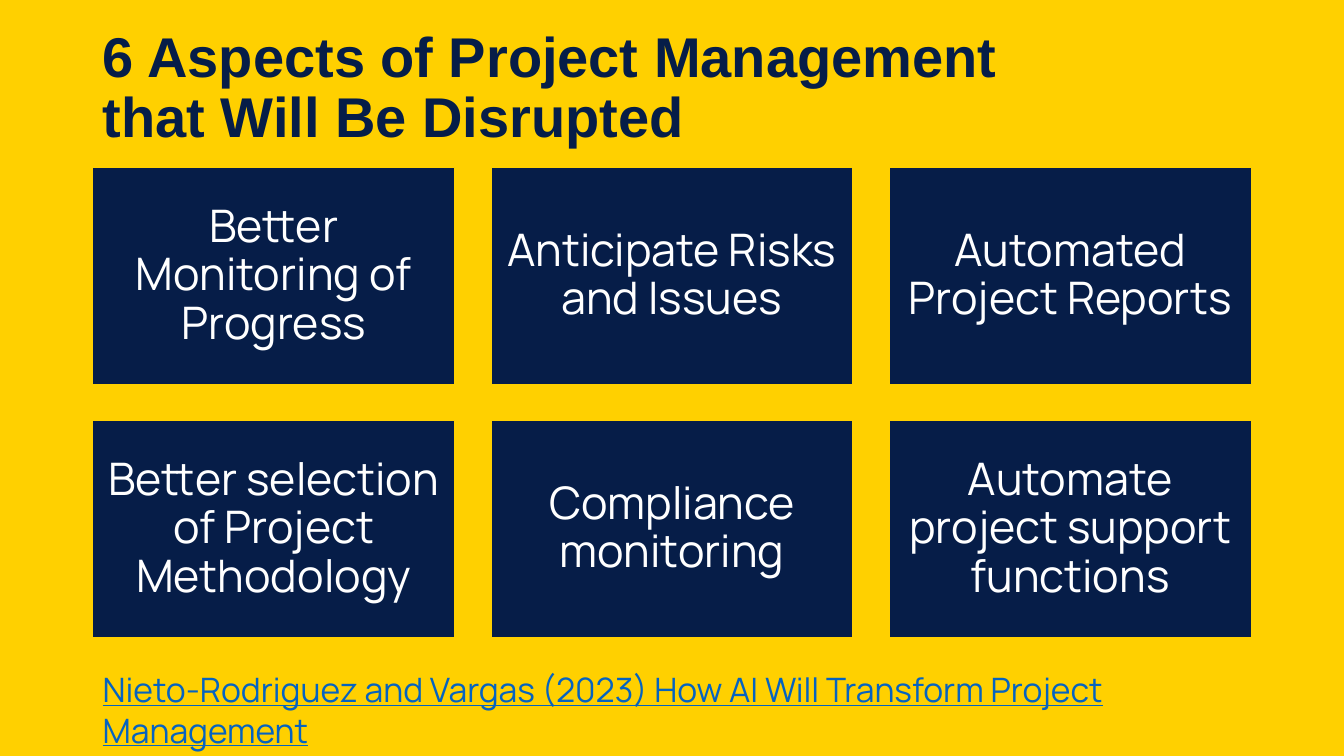
from pptx import Presentation
from pptx.dml.color import RGBColor
from pptx.enum.shapes import MSO_SHAPE
from pptx.enum.text import MSO_ANCHOR, MSO_AUTO_SIZE, PP_ALIGN
from pptx.util import Inches, Pt

COLORS = {"yellow": "FFD000", "navy": "061D48", "white": "FFFFFF", "citation": "0563C1"}
ASPECTS = [
    "Better Monitoring of Progress",
    "Anticipate Risks and Issues",
    "Automated Project Reports",
    "Better selection of Project Methodology",
    "Compliance monitoring",
    "Automate project support functions",
]
LEFT, TOP = 0.92, 1.66
CARD_WIDTH, CARD_HEIGHT = 3.59, 2.16
GAP_X, GAP_Y = 0.36, 0.35
COLUMNS = 3


def write_text(shape, text, size, color, font="Manrope", bold=False, underline=False,
               align=PP_ALIGN.LEFT, anchor=MSO_ANCHOR.MIDDLE, line_spacing=0.9, margin=None):
    frame = shape.text_frame
    frame.word_wrap = True
    frame.auto_size = MSO_AUTO_SIZE.NONE
    frame.vertical_anchor = anchor
    if margin is not None:
        frame.margin_left = frame.margin_right = Inches(margin)
        frame.margin_top = frame.margin_bottom = Inches(margin)
    paragraph = frame.paragraphs[0]
    paragraph.alignment = align
    paragraph.line_spacing = line_spacing
    paragraph.space_before = Pt(0)
    run = paragraph.add_run()
    run.text = text
    run.font.name = font
    run.font.size = Pt(size)
    run.font.bold = bold
    run.font.underline = underline
    run.font.color.rgb = RGBColor.from_string(COLORS[color])


presentation = Presentation()
presentation.slide_width = Inches(13.33)
presentation.slide_height = Inches(7.5)
slide = presentation.slides.add_slide(presentation.slide_layouts[5])
slide.background.fill.solid()
slide.background.fill.fore_color.rgb = RGBColor.from_string(COLORS["yellow"])

title = slide.shapes.title
title.left, title.top = Inches(LEFT), Inches(0.16)
title.width, title.height = Inches(9.82), Inches(1.45)
write_text(title, "6 Aspects of Project Management that Will Be Disrupted", size=40,
           color="navy", font="Arial", bold=True)

for index, aspect in enumerate(ASPECTS):
    row, column = divmod(index, COLUMNS)
    card = slide.shapes.add_shape(
        MSO_SHAPE.RECTANGLE,
        Inches(LEFT + column * (CARD_WIDTH + GAP_X)),
        Inches(TOP + row * (CARD_HEIGHT + GAP_Y)),
        Inches(CARD_WIDTH),
        Inches(CARD_HEIGHT),
    )
    card.shadow.inherit = False
    card.fill.solid()
    card.fill.fore_color.rgb = RGBColor.from_string(COLORS["navy"])
    card.line.color.rgb = RGBColor.from_string(COLORS["yellow"])
    card.line.width = Pt(1)
    write_text(card, aspect, size=32, color="white", align=PP_ALIGN.CENTER, margin=0.13)

citation = slide.shapes.add_textbox(Inches(LEFT), Inches(6.59), Inches(11.86), Inches(0.91))
write_text(citation,
           "Nieto-Rodriguez and Vargas (2023) How AI Will Transform Project Management",
           size=24, color="citation", underline=True, anchor=MSO_ANCHOR.TOP, line_spacing=1.0)

presentation.save("out.pptx")
